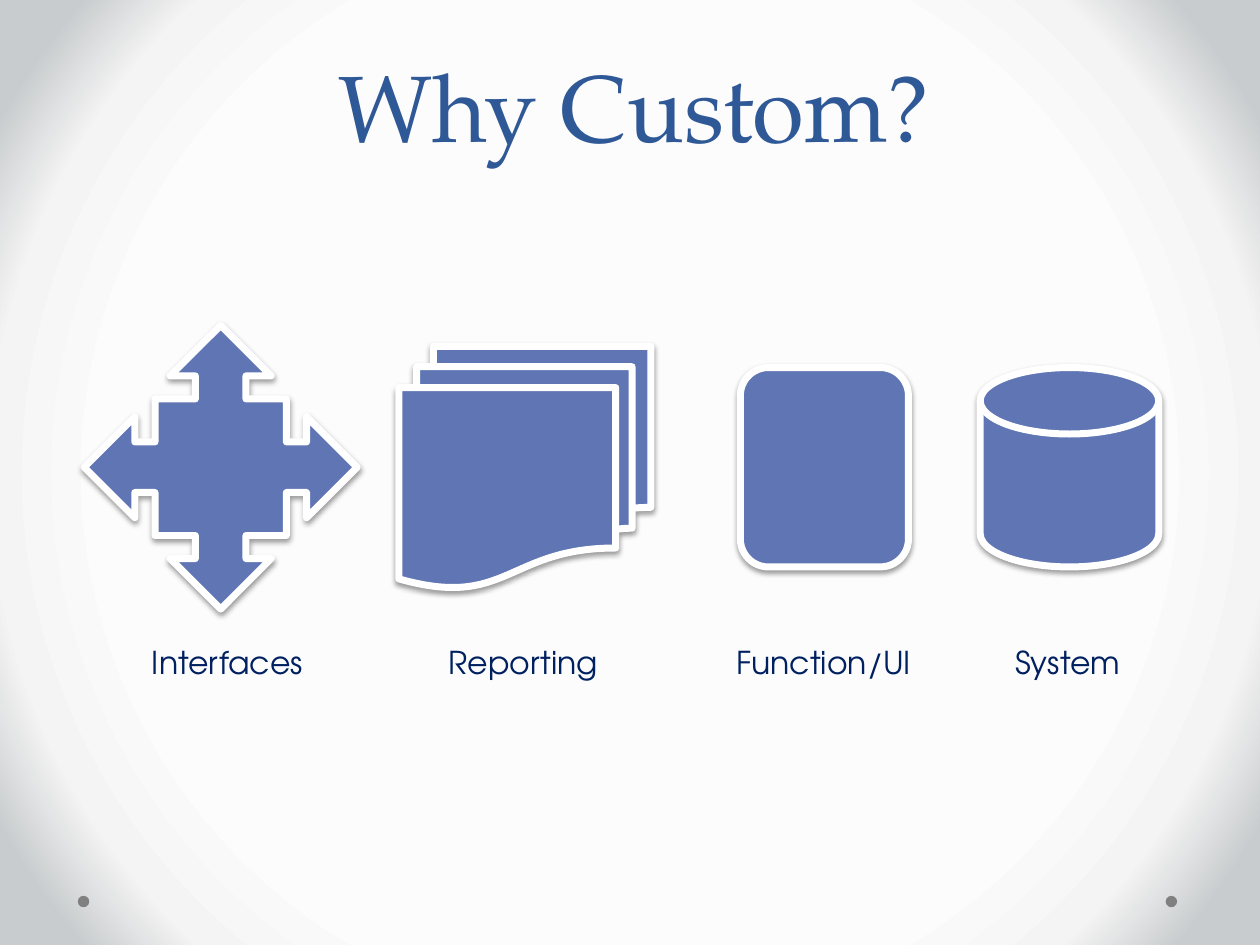
from pptx import Presentation
from pptx.dml.color import RGBColor
from pptx.enum.shapes import MSO_SHAPE
from pptx.enum.text import MSO_ANCHOR, MSO_AUTO_SIZE, PP_ALIGN
from pptx.oxml import parse_xml
from pptx.oxml.ns import nsdecls
from pptx.util import Cm, Pt

MULTIDOCUMENT = MSO_SHAPE.FLOWCHART_MULTIDOCUMENT
QUAD_ARROW = MSO_SHAPE.QUAD_ARROW_CALLOUT
DISK = MSO_SHAPE.FLOWCHART_MAGNETIC_DISK
ROUNDED = MSO_SHAPE.ROUNDED_RECTANGLE
ELLIPSE = MSO_SHAPE.OVAL

TITLE = "Why Custom?"
TITLE_FONT = "TeX Gyre Pagella"
LABEL_FONT = "TeX Gyre Adventor"
BACKDROP_STOPS = [(66, "FCFCFC"), (81, "F4F4F4"), (92, "C8CCCE")]

# label, label centre, label width, preset, icon centre, icon width, icon height
REASONS = [
    ("Interfaces", 4.62, 3.61, QUAD_ARROW, 4.45, 5.5, 5.72),
    ("Reporting", 10.56, 3.53, MULTIDOCUMENT, 10.58, 5.08, 4.87),
    ("Function/UI", 16.62, 4.04, ROUNDED, 16.62, 3.39, 4.02),
    ("System", 21.55, 2.67, DISK, 21.56, 3.6, 4.02),
]
ICON_MIDDLE = 9.42
LABEL_TOP, LABEL_HEIGHT = 12.83, 1.02
DOT_LEFTS, DOT_TOP, DOT_SIZE = (1.57, 23.5), 18.06, 0.23


def rgb(hex_color):
    return RGBColor.from_string(hex_color)


def style_text(paragraph, font_name, size, hex_color):
    font = paragraph.runs[0].font
    font.name = font_name
    font.size = Pt(size)
    font.color.rgb = rgb(hex_color)


def paint_backdrop(slide):
    slide.background.fill.solid()
    backdrop = slide.element.xpath(".//p:bgPr")[0]
    stops = "".join(
        f'<a:gs pos="{position * 1000}"><a:srgbClr val="{color}"/></a:gs>'
        for position, color in BACKDROP_STOPS
    )
    gradient = parse_xml(
        f'<a:gradFill {nsdecls("a")} rotWithShape="1"><a:gsLst>{stops}</a:gsLst>'
        '<a:path path="circle"><a:fillToRect l="50000" t="50000" r="50000" b="50000"/>'
        "</a:path></a:gradFill>"
    )
    backdrop.replace(backdrop[0], gradient)


def add_filled(slide, preset, left, top, width, height, hex_color):
    figure = slide.shapes.add_shape(preset, Cm(left), Cm(top), Cm(width), Cm(height))
    figure.shadow.inherit = False
    figure.fill.solid()
    figure.fill.fore_color.rgb = rgb(hex_color)
    figure.line.fill.background()
    return figure


def add_icon(slide, preset, center, width, height):
    icon = add_filled(slide, preset, center - width / 2, ICON_MIDDLE - height / 2,
                      width, height, "6076B4")
    icon.line.color.rgb = rgb("FFFFFF")
    icon.line.width = Pt(4)
    icon.element.xpath("./p:spPr/a:effectLst")[0].append(parse_xml(
        f'<a:outerShdw {nsdecls("a")} blurRad="{Pt(3.1)}" dist="{Pt(1.6)}" '
        'dir="5400000" rotWithShape="0"><a:srgbClr val="000000">'
        '<a:alpha val="38000"/></a:srgbClr></a:outerShdw>'
    ))


def add_label(slide, wording, center, width):
    label = slide.shapes.add_textbox(
        Cm(center - width / 2), Cm(LABEL_TOP), Cm(width), Cm(LABEL_HEIGHT))
    frame = label.text_frame
    frame.word_wrap = False
    frame.auto_size = MSO_AUTO_SIZE.SHAPE_TO_FIT_TEXT
    frame.text = wording
    style_text(frame.paragraphs[0], LABEL_FONT, 18, "002060")


def add_title(slide):
    title = slide.shapes.title
    title.left, title.top, title.width, title.height = Cm(1.35), Cm(0.64), Cm(22.86), Cm(2.74)
    frame = title.text_frame
    frame.text = TITLE
    frame.vertical_anchor = MSO_ANCHOR.BOTTOM
    frame.auto_size = MSO_AUTO_SIZE.NONE
    heading = frame.paragraphs[0]
    heading.alignment = PP_ALIGN.CENTER
    heading.line_spacing = Pt(58)
    style_text(heading, TITLE_FONT, 54, "2F5897")


def main():
    deck = Presentation()
    deck.slide_width, deck.slide_height = Cm(25.4), Cm(19.05)
    slide = deck.slides.add_slide(deck.slide_layouts[5])
    paint_backdrop(slide)
    for left in DOT_LEFTS:
        add_filled(slide, ELLIPSE, left, DOT_TOP, DOT_SIZE, DOT_SIZE, "808080")
    add_title(slide)
    for wording, label_center, label_width, preset, center, width, height in REASONS:
        add_icon(slide, preset, center, width, height)
        add_label(slide, wording, label_center, label_width)
    deck.save("out.pptx")


if __name__ == "__main__":
    main()
